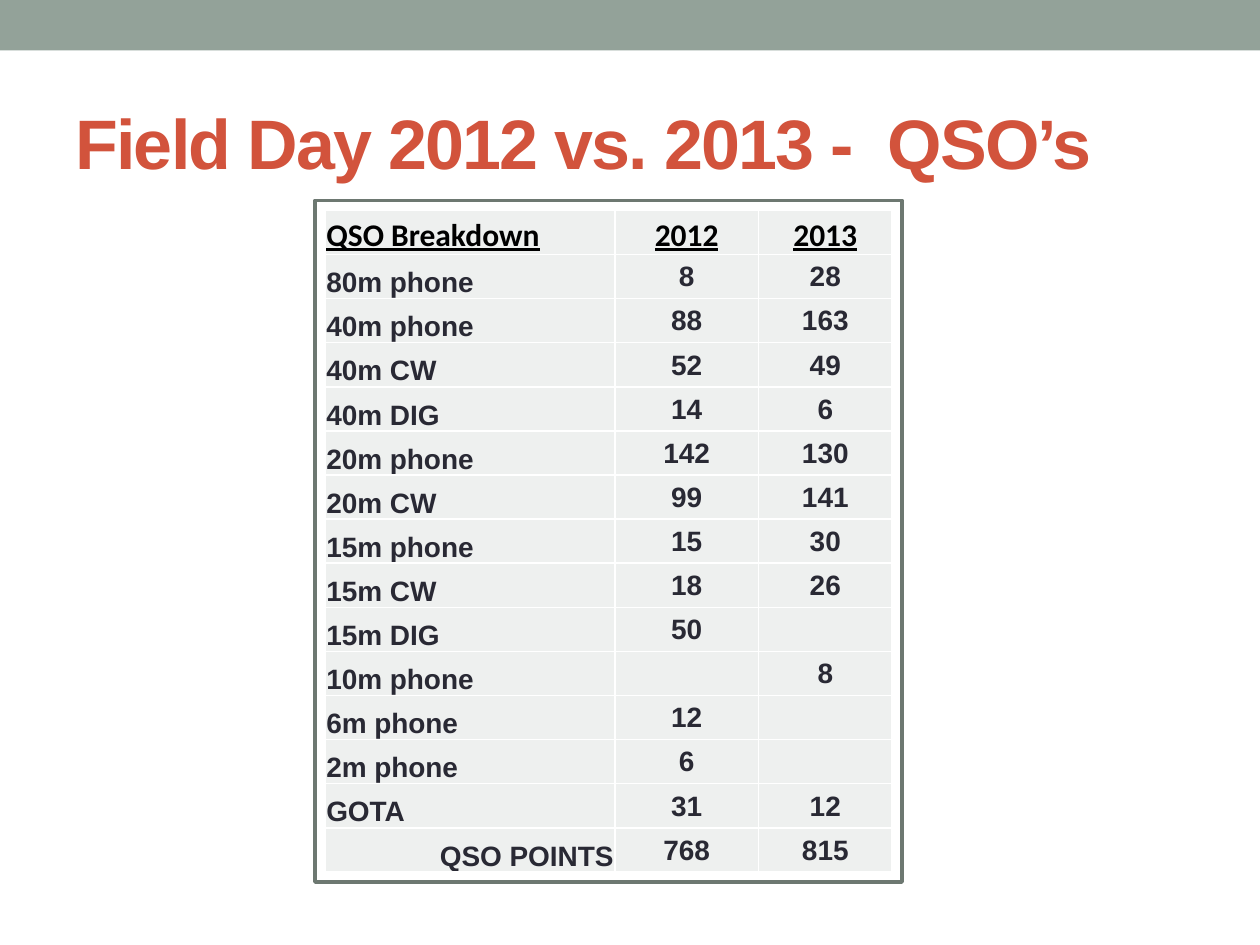
import pptx
import pptx.dml.color
import pptx.enum.shapes
import pptx.enum.text
import pptx.util
import lxml.etree

# Content
TITLE = "Field Day 2012 vs. 2013 -  QSO’s"
ROWS = [
    ("QSO Breakdown", "2012", "2013"),
    ("80m phone", "8", "28"),
    ("40m phone", "88", "163"),
    ("40m CW", "52", "49"),
    ("40m DIG", "14", "6"),
    ("20m phone", "142", "130"),
    ("20m CW", "99", "141"),
    ("15m phone", "15", "30"),
    ("15m CW", "18", "26"),
    ("15m DIG", "50", ""),
    ("10m phone", "", "8"),
    ("6m phone", "12", ""),
    ("2m phone", "6", ""),
    ("GOTA", "31", "12"),
    ("QSO POINTS", "768", "815"),
]
COLORS = {
    "band": "93A299", "title": "D2533C", "frame": "6D7871", "white": "FFFFFF",
    "cell": "EEF0EF", "header": "000000", "body": "292934",
}

# Layout in inches
WIDTH, HEIGHT = 10, 7.5
COLUMNS = (2.3, 1.14, 1.06)
ROW_HEIGHT = 0.35
TABLE_LEFT, TABLE_TOP = 2.58, 1.67
FRAME_GAP = 0.08

inch = pptx.util.Inches
ALIGN = pptx.enum.text.PP_ALIGN
ANCHOR = pptx.enum.text.MSO_ANCHOR


def color(name):
    return pptx.dml.color.RGBColor.from_string(COLORS[name])


def add_rectangle(slide, left, top, width, height, fill, line=None):
    shape = slide.shapes.add_shape(
        pptx.enum.shapes.MSO_SHAPE.RECTANGLE,
        inch(left), inch(top), inch(width), inch(height))
    shape.shadow.inherit = False
    shape.fill.solid()
    shape.fill.fore_color.rgb = color(fill)
    if line:
        shape.line.color.rgb = color(line)
        shape.line.width = pptx.util.Pt(2.08)
    else:
        shape.line.fill.background()


def add_run(paragraph, text, size, font, fill):
    run = paragraph.add_run()
    run.text = text
    run.font.size = pptx.util.Pt(size)
    run.font.name = font
    run.font.bold = True
    run.font.color.rgb = color(fill)
    return run


def add_borders(cell):
    properties = cell._tc.get_or_add_tcPr()
    namespace = "{http://schemas.openxmlformats.org/drawingml/2006/main}"
    for position, side in enumerate(("lnL", "lnR", "lnT", "lnB")):
        line = lxml.etree.Element(namespace + side, w=str(pptx.util.Pt(1)))
        fill = lxml.etree.SubElement(line, namespace + "solidFill")
        lxml.etree.SubElement(fill, namespace + "srgbClr", val=COLORS["white"])
        properties.insert(position, line)


def fill_cell(cell, text, row, column):
    header, label = row == 0, column == 0
    cell.margin_left = cell.margin_right = cell.margin_top = inch(0.01)
    cell.margin_bottom = 0
    cell.vertical_anchor = ANCHOR.BOTTOM if header or label else ANCHOR.MIDDLE
    cell.fill.solid()
    cell.fill.fore_color.rgb = color("cell")
    add_borders(cell)
    if not text:
        return
    paragraph = cell.text_frame.paragraphs[0]
    if not label:
        paragraph.alignment = ALIGN.CENTER
    elif row == len(ROWS) - 1:
        paragraph.alignment = ALIGN.RIGHT
    if header:
        add_run(paragraph, text, 18, "Calibri", "header").font.underline = True
    else:
        add_run(paragraph, text, 16, "Arial", "body")


def add_score_table(slide):
    width, height = sum(COLUMNS), ROW_HEIGHT * len(ROWS)
    add_rectangle(slide, TABLE_LEFT - FRAME_GAP, TABLE_TOP - FRAME_GAP,
                  width + 2 * FRAME_GAP, height + 2 * FRAME_GAP, "white", "frame")
    table = slide.shapes.add_table(
        len(ROWS), len(COLUMNS), inch(TABLE_LEFT), inch(TABLE_TOP),
        inch(width), inch(height)).table
    table.first_row = table.horz_banding = False
    for column, column_width in enumerate(COLUMNS):
        table.columns[column].width = inch(column_width)
    for row, values in enumerate(ROWS):
        table.rows[row].height = inch(ROW_HEIGHT)
        for column, text in enumerate(values):
            fill_cell(table.cell(row, column), text, row, column)


def add_title(slide):
    box = slide.shapes.add_textbox(inch(0.5), inch(0.58), inch(9), inch(1.08))
    frame = box.text_frame
    frame.word_wrap = True
    frame.vertical_anchor = ANCHOR.MIDDLE
    run = add_run(frame.paragraphs[0], TITLE, 40, "Arial", "title")
    run.font._element.set("spc", "-100")


def main():
    presentation = pptx.Presentation()
    presentation.slide_width = inch(WIDTH)
    presentation.slide_height = inch(HEIGHT)
    slide = presentation.slides.add_slide(presentation.slide_layouts[6])
    add_rectangle(slide, 0, 0, WIDTH, 0.4, "band")
    add_score_table(slide)
    add_title(slide)
    presentation.save("out.pptx")


if __name__ == "__main__":
    main()
